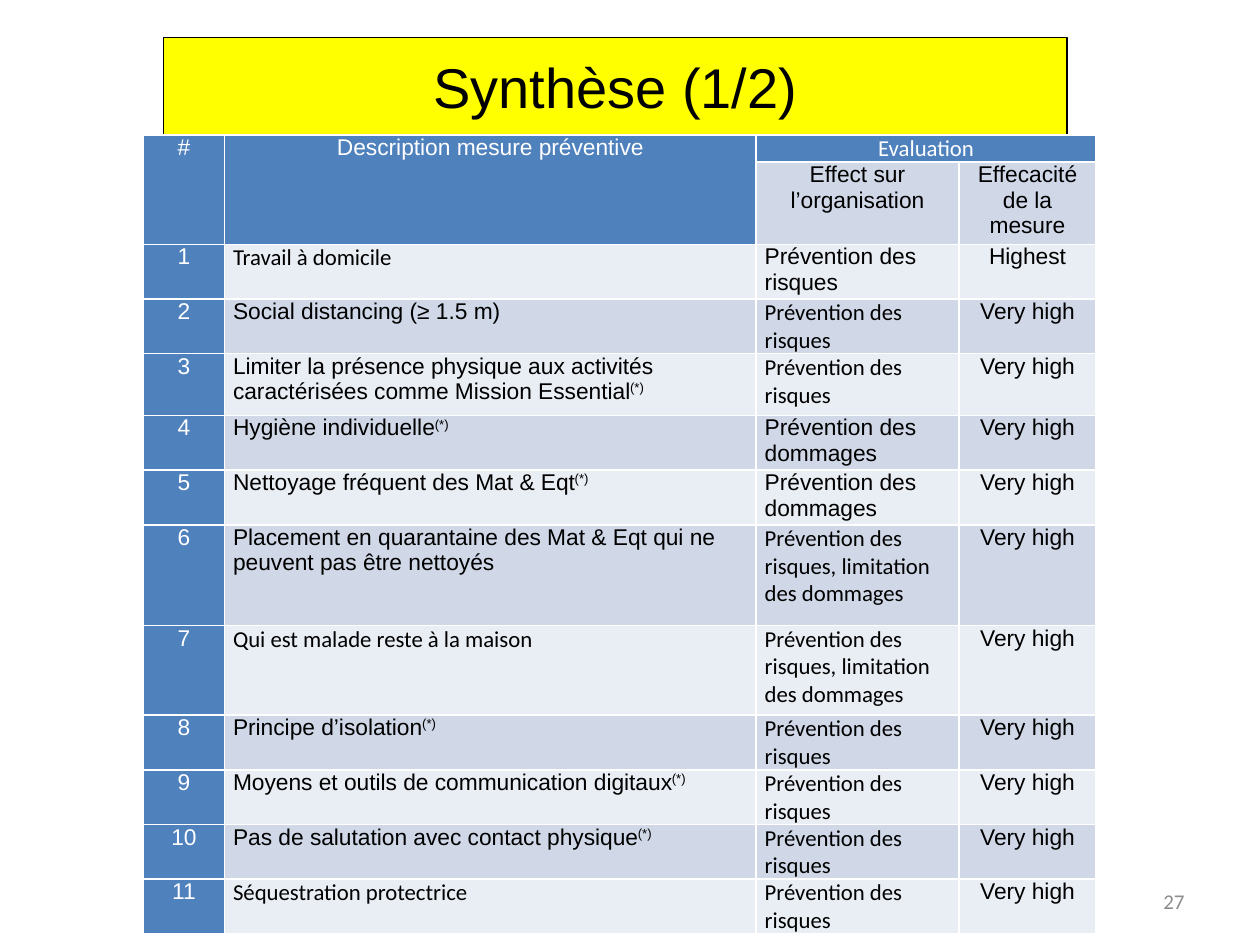
from dataclasses import dataclass

from lxml.etree import SubElement
from pptx import Presentation
from pptx.dml.color import RGBColor
from pptx.enum.shapes import MSO_SHAPE
from pptx.enum.text import MSO_ANCHOR, PP_ALIGN
from pptx.oxml.ns import qn
from pptx.util import Inches, Pt


@dataclass(frozen=True)
class Theme:
    sans: str = "Arial"
    alt: str = "Calibri"
    title_size: float = 32
    table_size: float = 13
    number_size: float = 12
    black: str = "000000"
    white: str = "FFFFFF"
    grey: str = "8C8C8C"
    yellow: str = "FFFF00"
    blue: str = "4F81BD"
    bands: tuple[str, str] = ("E9EDF4", "D0D8E8")
    border: float = 1
    space_after: float = 4.6


@dataclass(frozen=True)
class Measure:
    text: str
    effect: str
    height: float = 0.42
    rating: str = "Very high"
    note: bool = False
    text_font: str = Theme.sans
    effect_font: str = Theme.alt


T = Theme()
RISKS = "Prévention des risques"
DAMAGE = "Prévention des dommages"
BOTH = "Prévention des risques, limitation des dommages"
COL_WIDTHS = (0.64, 4.22, 1.61, 1.09)
HEADER_HEIGHTS = (0.21, 0.63)
MEASURES = (
    Measure("Travail à domicile", RISKS, rating="Highest", text_font=T.alt, effect_font=T.sans),
    Measure("Social distancing (≥ 1.5 m)", RISKS),
    Measure("Limiter la présence physique aux activités caractérisées comme Mission Essential",
            RISKS, 0.49, note=True),
    Measure("Hygiène individuelle", DAMAGE, note=True, effect_font=T.sans),
    Measure("Nettoyage fréquent des Mat & Eqt", DAMAGE, note=True, effect_font=T.sans),
    Measure("Placement en quarantaine des Mat & Eqt qui ne peuvent pas être nettoyés", BOTH, 0.8),
    Measure("Qui est malade reste à la maison", BOTH, 0.71, text_font=T.alt),
    Measure("Principe d’isolation", RISKS, note=True),
    Measure("Moyens et outils de communication digitaux", RISKS, note=True),
    Measure("Pas de salutation avec contact physique", RISKS, note=True),
    Measure("Séquestration protectrice", RISKS, text_font=T.alt),
)


def add_run(p, text: str, size: float, font: str, color: str):
    r = p.add_run()
    r.text = text
    r.font.size = Pt(size)
    r.font.name = font
    r.font.color.rgb = RGBColor.from_string(color)
    return r


def style_cell(cell, fill: str) -> None:
    """Set the cell's margins, white borders and fill."""
    cell.margin_left = cell.margin_right = Inches(0.07)
    cell.margin_top = cell.margin_bottom = 0
    tc_pr = cell._tc.get_or_add_tcPr()
    for side in ("lnL", "lnR", "lnT", "lnB"):
        ln = SubElement(tc_pr, qn(f"a:{side}"), w=str(Pt(T.border)))
        SubElement(SubElement(ln, qn("a:solidFill")), qn("a:srgbClr"), val=T.white)
    cell.fill.solid()
    cell.fill.fore_color.rgb = RGBColor.from_string(fill)


def write_cell(cell, text: str, color: str = T.black, font: str = T.sans,
               align: PP_ALIGN = PP_ALIGN.CENTER, note: bool = False) -> None:
    p = cell.text_frame.paragraphs[0]
    p.alignment = align
    if align == PP_ALIGN.CENTER:
        p.space_after = Pt(T.space_after)
    add_run(p, text, T.table_size, font, color)
    if note:
        r = add_run(p, "(*)", T.table_size, font, color)
        r.font._element.set("baseline", "30000")


def add_title(s, text: str) -> None:
    sp = s.shapes.add_shape(MSO_SHAPE.RECTANGLE, Inches(1.3), Inches(0.3), Inches(7.17), Inches(0.77))
    sp.shadow.inherit = False
    sp.fill.solid()
    sp.fill.fore_color.rgb = RGBColor.from_string(T.yellow)
    sp.line.color.rgb = RGBColor.from_string(T.black)
    sp.line.width = Pt(0.75)
    tf = sp.text_frame
    tf.word_wrap = True
    tf.vertical_anchor = MSO_ANCHOR.MIDDLE
    p = tf.paragraphs[0]
    p.alignment = PP_ALIGN.CENTER
    add_run(p, text, T.title_size, T.sans, T.black)


def add_slide_number(s, text: str) -> None:
    sp = s.shapes.add_textbox(Inches(7.17), Inches(6.95), Inches(2.33), Inches(0.4))
    tf = sp.text_frame
    tf.word_wrap = True
    tf.vertical_anchor = MSO_ANCHOR.MIDDLE
    p = tf.paragraphs[0]
    p.alignment = PP_ALIGN.RIGHT
    add_run(p, text, T.number_size, T.alt, T.grey)


def add_measures_table(s) -> None:
    heights = HEADER_HEIGHTS + tuple(m.height for m in MEASURES)
    frame = s.shapes.add_table(len(heights), len(COL_WIDTHS), Inches(1.14), Inches(1.07),
                               Inches(sum(COL_WIDTHS)), Inches(sum(heights)))
    table = frame.table
    table.first_row = table.horz_banding = False
    for col, width in zip(table.columns, COL_WIDTHS):
        col.width = Inches(width)
    for i, (row, height) in enumerate(zip(table.rows, heights)):
        row.height = Inches(height)
        for j, cell in enumerate(row.cells):
            style_cell(cell, T.blue if i == 0 or j == 0 else T.bands[i % 2])

    table.cell(0, 0).merge(table.cell(1, 0))
    table.cell(0, 1).merge(table.cell(1, 1))
    table.cell(0, 2).merge(table.cell(0, 3))
    write_cell(table.cell(0, 0), "#", T.white)
    write_cell(table.cell(0, 1), "Description mesure préventive", T.white)
    write_cell(table.cell(0, 2), "Evaluation", T.white, T.alt)
    write_cell(table.cell(1, 2), "Effect sur l’organisation")
    write_cell(table.cell(1, 3), "Effecacité de la mesure")

    for n, m in enumerate(MEASURES, 1):
        number, text, effect, rating = (table.cell(n + 1, j) for j in range(4))
        write_cell(number, str(n), T.white)
        write_cell(text, m.text, font=m.text_font, align=PP_ALIGN.LEFT, note=m.note)
        write_cell(effect, m.effect, font=m.effect_font, align=PP_ALIGN.LEFT)
        write_cell(rating, m.rating)


def main() -> None:
    prs = Presentation()
    prs.slide_width, prs.slide_height = Inches(10), Inches(7.5)
    s = prs.slides.add_slide(prs.slide_layouts[6])
    add_title(s, "Synthèse (1/2)")
    add_slide_number(s, "27")
    add_measures_table(s)
    prs.save("out.pptx")


if __name__ == "__main__":
    main()
